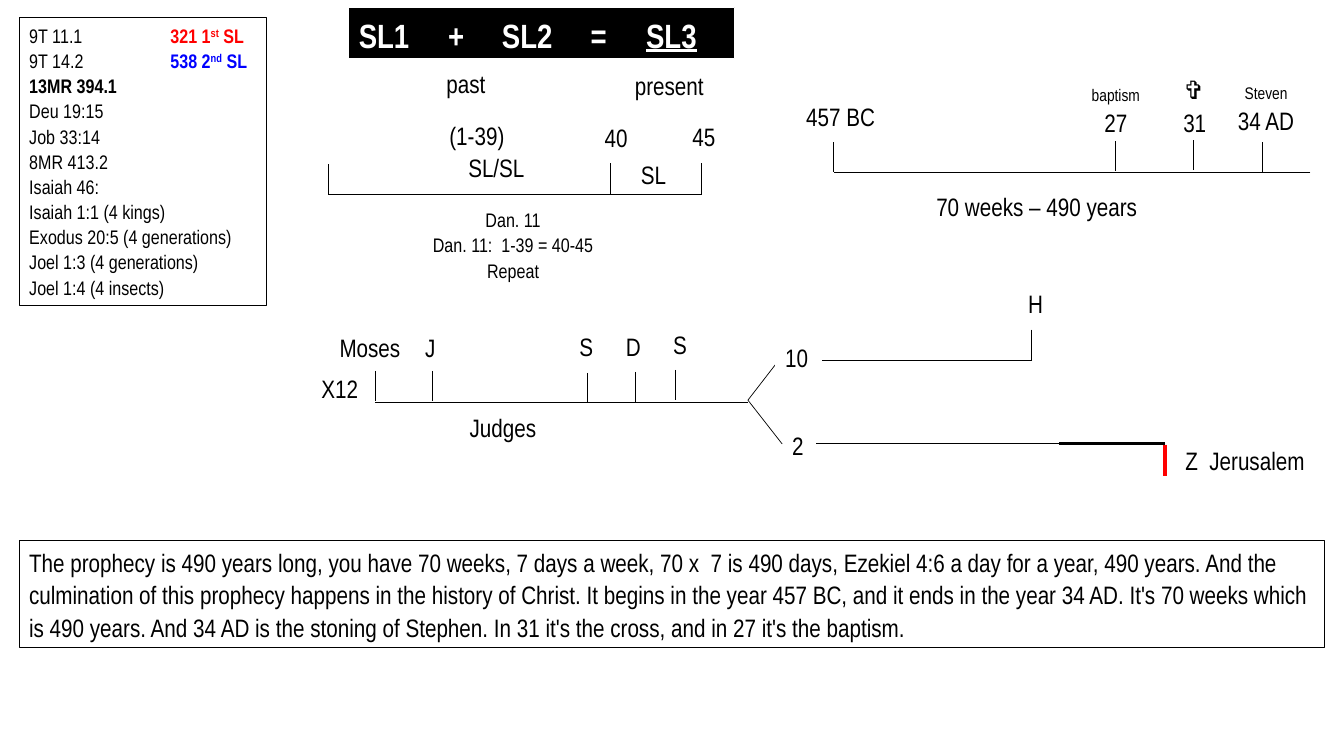
"""Build the slide of prophetic timelines on a grid of tenth-inch cells."""
from dataclasses import dataclass
from typing import Optional

import pptx
import pptx.dml.color
import pptx.enum.shapes
import pptx.enum.text
import pptx.oxml.ns
import pptx.util
from lxml import etree

BLACK = pptx.dml.color.RGBColor(0x00, 0x00, 0x00)
WHITE = pptx.dml.color.RGBColor(0xFF, 0xFF, 0xFF)
RED = pptx.dml.color.RGBColor(0xFF, 0x00, 0x00)
BLUE = pptx.dml.color.RGBColor(0x00, 0x00, 0xFF)
FONT = "Arial Narrow"
COLUMNS, ROWS = 133.33, 75
CELL = pptx.util.Inches(0.1)
TICK_ROWS = 3
NOTE_COLUMN = 14
EQUATION_STOPS = (8.85, 14.2, 23, 28.5)
LEFT = pptx.enum.text.PP_ALIGN.LEFT
CENTER = pptx.enum.text.PP_ALIGN.CENTER


@dataclass(frozen=True)
class Line:
    """One line of label text."""
    text: str
    size: float = 18
    align: pptx.enum.text.PP_ALIGN = LEFT


@dataclass(frozen=True)
class Label:
    """A box of lines placed on the grid."""
    left: float
    top: float
    width: float
    lines: tuple[Line, ...]
    height: float = 4.1
    border: pptx.dml.color.RGBColor = WHITE


@dataclass(frozen=True)
class Stroke:
    """A straight line between two grid points."""
    start: tuple[float, float]
    end: tuple[float, float]
    color: pptx.dml.color.RGBColor = BLACK
    weight: float = 0.5


@dataclass(frozen=True)
class Timeline:
    """A horizontal base with ticks given as column and top row."""
    first: float
    last: float
    row: float
    ticks: tuple[tuple[float, float], ...] = ()


@dataclass(frozen=True)
class Reference:
    """A cited passage, with an optional coloured note."""
    text: str
    bold: bool = False
    year: str = ""
    ordinal: str = ""
    color: Optional[pptx.dml.color.RGBColor] = None


REFERENCES = (
    Reference("9T 11.1", year="321 1", ordinal="st", color=RED),
    Reference("9T 14.2", year="538 2", ordinal="nd", color=BLUE),
    Reference("13MR 394.1", bold=True),
    *map(Reference, (
        "Deu 19:15", "Job 33:14", "8MR 413.2", "Isaiah 46:", "Isaiah 1:1 (4 kings)",
        "Exodus 20:5 (4 generations)", "Joel 1:3 (4 generations)", "Joel 1:4 (4 insects)")),
)
TIMELINES = (
    Timeline(32.6, 69.6, 19.3, ((32.6, 16.3), (60.6, 16.2), (69.6, 16.2))),
    Timeline(82.7, 130, 17.1, ((82.7, 14.1), (110.7, 14), (118.4, 13.9), (125.2, 14.1))),
    Timeline(37.2, 74.2, 39.9, ((37.2, 36.8), (42.9, 36.8), (58.3, 37), (63, 36.9), (67, 36.7))),
    Timeline(81.5, 102.4, 35.8, ((102.3, 32.7),)),
    Timeline(81, 115.6, 44),
)
JERUSALEM_STROKES = (
    Stroke((115.6, 44.1), (115.6, 47.2), RED, 3),
    Stroke((115.6, 44), (105.1, 44), BLACK, 2.25),
)
NORTHERN_FORK = Stroke((77.6, 35.3), (74.2, 39.7))
SOUTHERN_FORK = Stroke((74.2, 39.7), (77.6, 44.05))
SOUTHERN_TRIBES = Label(77.6, 42, 3.9, (Line("2"),))
SINGLE_LABELS = (
    (62.6, 15.1, 5.1, "SL"), (59, 11.4, 5.1, "40"), (67.7, 11.3, 5.1, "45"),
    (43.3, 6.1, 11.3, "past"), (62, 6.3, 11.3, "present"),
    (41.2, 32.3, 5.1, "J"), (32.7, 32.3, 8.3, "Moses"), (30.9, 36.3, 6, "X12"),
    (45.6, 40.2, 11.5, "Judges"), (56.5, 32.2, 5.1, "S"), (61.1, 32.2, 5.1, "D"),
    (65.8, 32, 5.1, "S"), (76.9, 33.3, 6, "10"), (101, 27.9, 5.1, "H"),
    (116.6, 43.5, 17.2, "Z  Jerusalem"), (79, 9.3, 9.7, "457 BC"),
    (91.9, 18.3, 25.6, "70 weeks – 490 years"),
)
PROPHECY = (
    "The prophecy is 490 years long, you have 70 weeks, 7 days a week, 70 x  7 is 490 days, "
    "Ezekiel 4:6 a day for a year, 490 years. And the culmination of this prophecy happens in "
    "the history of Christ. It begins in the year 457 BC, and it ends in the year 34 AD. It's "
    "70 weeks which is 490 years. And 34 AD is the stoning of Stephen. In 31 it's the cross, "
    "and in 27 it's the baptism."
)
LABELS = (
    *(Label(left, top, width, (Line(text),)) for left, top, width, text in SINGLE_LABELS),
    Label(35.3, 20, 31.2, tuple(
        Line(text, 14, CENTER) for text in ("Dan. 11", "Dan. 11:  1-39 = 40-45", "Repeat")), 8.4),
    Label(43.6, 11.2, 11.3, (Line("(1-39)"), Line("SL/SL", align=CENTER)), 7.3),
    Label(105.7, 7.8, 10, (Line("baptism", 12, CENTER), Line("27", align=CENTER)), 6.2),
    Label(116.4, 6.7, 5.1, (Line("✞"), Line("31")), 7.3),
    Label(121.2, 7.6, 8.8, (Line("Steven", 12, CENTER), Line("34 AD", align=CENTER)), 6.2),
    Label(1.9, 53.6, 129.5, (Line(PROPHECY),), 10.6, BLACK),
)


def grid(cells: float) -> int:
    """Turn grid cells into a length."""
    return round(cells * CELL)


def place(box, left: float, top: float, width: float, height: float, fill, border) -> None:
    """Position a text-bearing shape of fixed size and paint it."""
    box.left, box.top, box.width, box.height = map(grid, (left, top, width, height))
    box.fill.solid()
    box.fill.fore_color.rgb = fill
    box.line.color.rgb = border
    box.line.width = pptx.util.Pt(0.75)
    frame = box.text_frame
    frame.word_wrap = True
    frame.auto_size = pptx.enum.text.MSO_AUTO_SIZE.NONE
    frame.vertical_anchor = pptx.enum.text.MSO_ANCHOR.TOP


def style(paragraph, size: float, color, align=LEFT, bold: Optional[bool] = None) -> None:
    """Give a paragraph its spacing and font."""
    paragraph.alignment = align
    paragraph.line_spacing = 1.07
    paragraph.space_before = pptx.util.Pt(0)
    font = paragraph.font
    font.name, font.size, font.bold = FONT, pptx.util.Pt(size), bold
    font.color.rgb = color


def add_label(slide, label: Label):
    """Draw a label and return its shape."""
    box = slide.shapes.add_textbox(0, 0, CELL, CELL)
    place(box, label.left, label.top, label.width, label.height, WHITE, label.border)
    for index, line in enumerate(label.lines):
        frame = box.text_frame
        paragraph = frame.add_paragraph() if index else frame.paragraphs[0]
        paragraph.text = line.text
        style(paragraph, line.size, BLACK, line.align)
    return box


def add_stroke(slide, stroke: Stroke):
    """Draw a stroke and return its connector."""
    connector = slide.shapes.add_connector(
        pptx.enum.shapes.MSO_CONNECTOR.STRAIGHT, *map(grid, stroke.start + stroke.end))
    connector.line.color.rgb = stroke.color
    connector.line.width = pptx.util.Pt(stroke.weight)
    etree.SubElement(connector._element.spPr, pptx.oxml.ns.qn("a:effectLst"))
    return connector


def add_timeline(slide, timeline: Timeline) -> None:
    """Draw a timeline's base and its ticks."""
    add_stroke(slide, Stroke((timeline.last, timeline.row), (timeline.first, timeline.row)))
    for column, top in timeline.ticks:
        add_stroke(slide, Stroke((column, top), (column, top + TICK_ROWS)))


def fill_title(title) -> None:
    """Write the equation of the title on tab stops."""
    place(title, 34.6, 0.7, 38.3, 5.1, BLACK, WHITE)
    equation = title.text_frame.paragraphs[0]
    properties = equation._p.get_or_add_pPr()
    tabs = etree.SubElement(properties, pptx.oxml.ns.qn("a:tabLst"))
    for stop in EQUATION_STOPS:
        etree.SubElement(tabs, pptx.oxml.ns.qn("a:tab"), pos=str(grid(stop)), algn="l")
    style(equation, 24, WHITE, bold=True)
    equation.add_run().text = "SL1\t+\tSL2\t=\t"
    total = equation.add_run()
    total.text = "SL3"
    total.font.underline = True


def fill_references(body) -> None:
    """Write the list of references, with notes on a hanging indent."""
    place(body, 1.9, 1.7, 24.5, 28.6, WHITE, BLACK)
    for index, reference in enumerate(REFERENCES):
        frame = body.text_frame
        paragraph = frame.add_paragraph() if index else frame.paragraphs[0]
        hang = grid(NOTE_COLUMN) if reference.year else 0
        properties = paragraph._p.get_or_add_pPr()
        properties.set("marL", str(hang))
        properties.set("indent", str(-hang))
        etree.SubElement(properties, pptx.oxml.ns.qn("a:buNone"))
        style(paragraph, 14, BLACK, bold=reference.bold)
        paragraph.add_run().text = reference.text + ("\t" if reference.year else "")
        if reference.year:
            for text in (reference.year, reference.ordinal, " SL"):
                note = paragraph.add_run()
                note.text = text
                note.font.bold = True
                note.font.color.rgb = reference.color
                if text == reference.ordinal:
                    note._r.get_or_add_rPr().set("baseline", "30000")


def main() -> None:
    """Build and save the slide."""
    deck = pptx.Presentation()
    deck.slide_width, deck.slide_height = grid(COLUMNS), grid(ROWS)
    slide = deck.slides.add_slide(deck.slide_layouts[1])
    fill_title(slide.shapes.title)
    fill_references(slide.placeholders[1])
    add_stroke(slide, NORTHERN_FORK)
    for label in LABELS:
        add_label(slide, label)
    southern_tribes = add_label(slide, SOUTHERN_TRIBES)
    add_stroke(slide, SOUTHERN_FORK).end_connect(southern_tribes, 1)
    for timeline in TIMELINES:
        add_timeline(slide, timeline)
    for stroke in JERUSALEM_STROKES:
        add_stroke(slide, stroke)
    deck.save("out.pptx")


if __name__ == "__main__":
    main()
